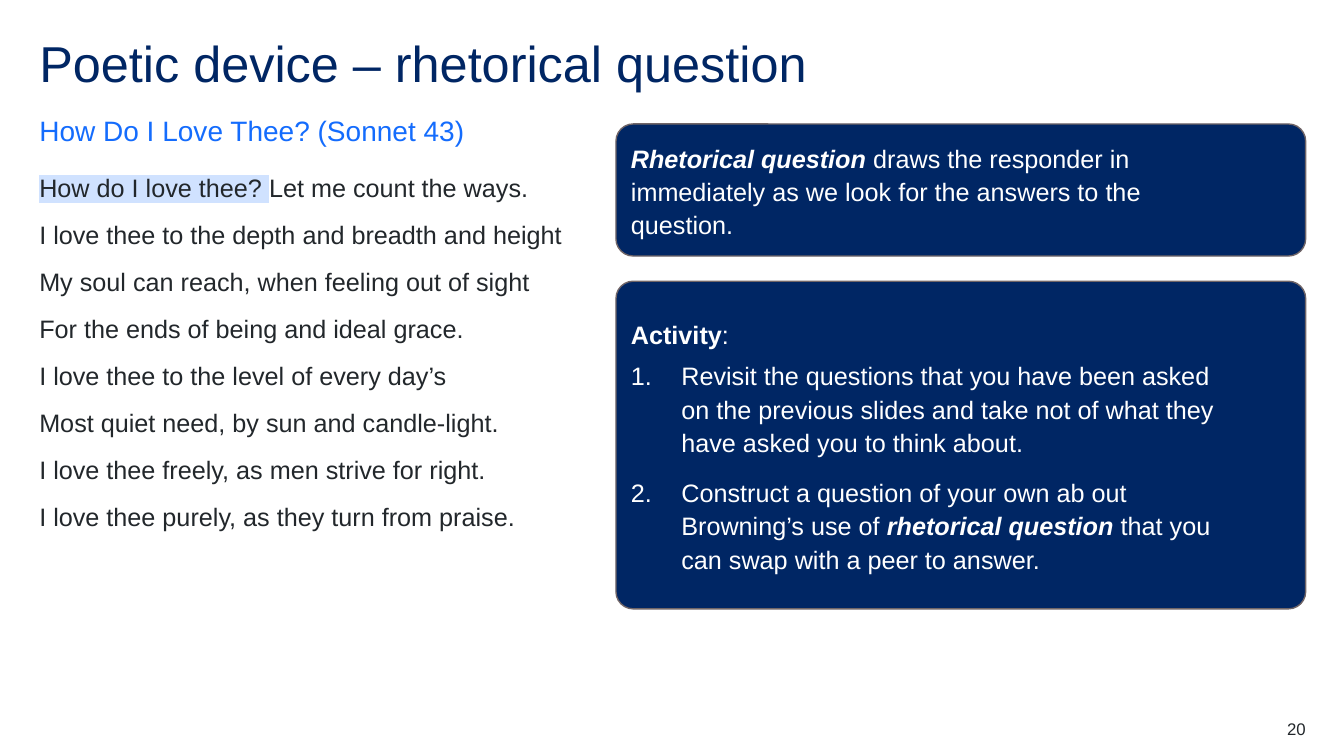
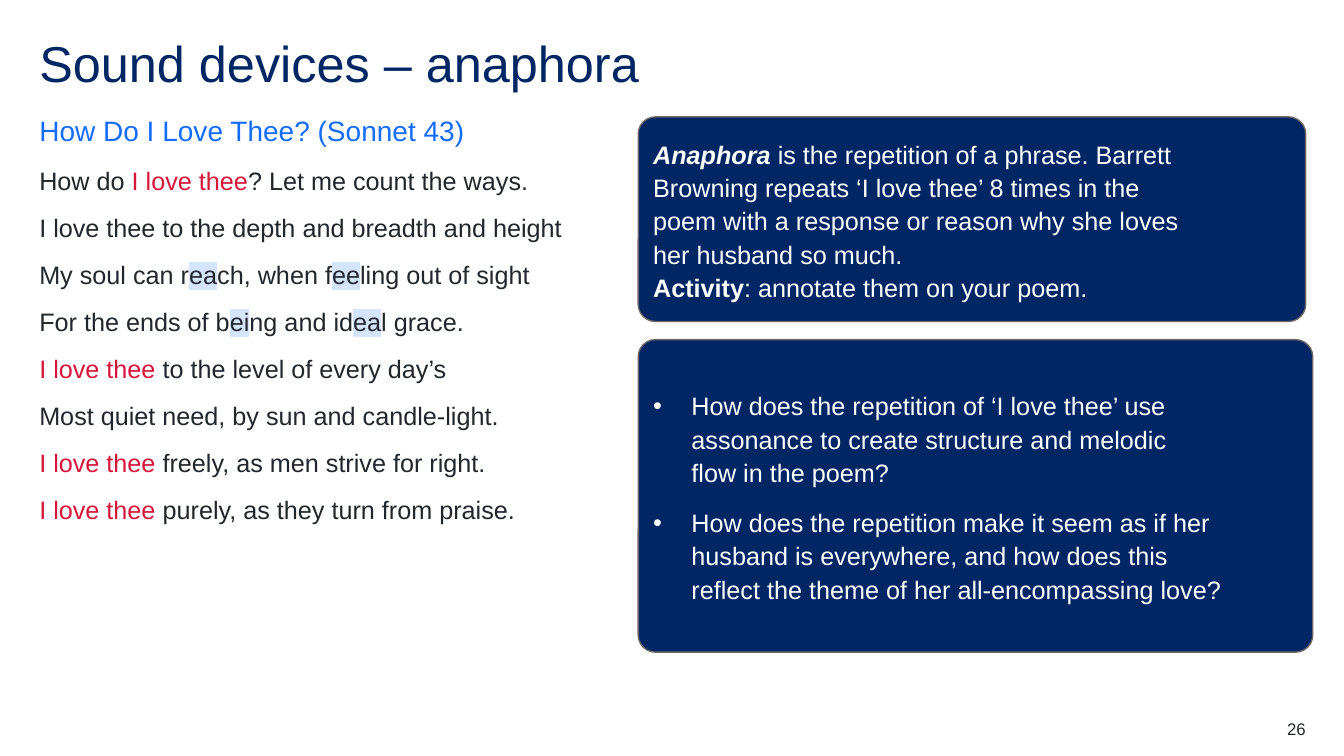
import pptx
import pptx.util
import pptx.dml.color
import pptx.enum.shapes
import pptx.enum.text
import pptx.oxml.ns
from lxml import etree

Inches, Pt = pptx.util.Inches, pptx.util.Pt
ANCHOR = pptx.enum.text.MSO_ANCHOR
ALIGN = pptx.enum.text.PP_ALIGN

COLORS = {
    "navy": "002664", "blue": "146CFD", "ink": "22272B", "red": "D7153A",
    "white": "FFFFFF", "border": "706567", "sky": "D0E2FF", "pale": "D6E5FF",
}
FONT = "Arial"
LEFT, CONTENT_W, RIGHT = 0.39, 12.56, 12.95
CORNER = 0.17

# Run styles: a paragraph is a string or a list of strings and (text, style) pairs.
STYLES = {
    "bold": {"bold": True},
    "term": {"bold": True, "italic": True},
    "phrase": {"color": "red"},
    "question": {"highlight": "sky"},
    "assonance": {"highlight": "pale"},
}
POEM = "How Do I Love Thee? (Sonnet 43)"
REFRAIN = ("I love thee", "phrase")
LINE_2 = "I love thee to the depth and breadth and height"
LINE_6 = "Most quiet need, by sun and candle-light."

SLIDES = [
    {
        "title": "Poetic device – rhetorical question",
        "number": "20",
        "poem_box": (LEFT, 1.71, 5.33, 5.27),
        "poem": [
            [("How do I love thee? ", "question"), "Let me count the ways."],
            LINE_2,
            "My soul can reach, when feeling out of sight",
            "For the ends of being and ideal grace.",
            "I love thee to the level of every day’s",
            LINE_6,
            "I love thee freely, as men strive for right.",
            "I love thee purely, as they turn from praise.",
        ],
        "cards": [
            {"box": (6.11, 1.23, 6.84, 1.31), "intro": [
                [("Rhetorical question ", "term"),
                 "draws the responder in immediately as we look for the answers to the question."],
            ]},
            {"box": (6.11, 2.79, 6.84, 3.25), "intro": [[("Activity", "bold"), ":"]],
             "bullet": "number", "indent": 0.5, "items": [
                "Revisit the questions that you have been asked on the previous slides "
                "and take not of what they have asked you to think about.",
                ["Construct a question of your own ab out Browning’s use of ",
                 ("rhetorical question ", "term"),
                 "that you can swap with a peer to answer."],
            ]},
        ],
    },
    {
        "title": "Sound devices – anaphora",
        "number": "26",
        "poem_box": (LEFT, 1.64, 5.4, 5.34),
        "poem": [
            ["How do ", REFRAIN, "? Let me count the ways."],
            LINE_2,
            ["My soul can r", ("ea", "assonance"), "ch, when f", ("ee", "assonance"),
             "ling out of sight"],
            ["For the ends of b", ("ei", "assonance"), "ng and id", ("ea", "assonance"),
             "l grace."],
            [REFRAIN, " to the level of every day’s"],
            LINE_6,
            [REFRAIN, " freely, as men strive for right."],
            [REFRAIN, " purely, as they turn from praise."],
        ],
        "cards": [
            {"box": (6.33, 1.16, 6.62, 2.03), "intro": [
                [("Anaphora", "term"),
                 " is the repetition of a phrase. Barrett Browning repeats ‘I love thee’ "
                 "8 times in the\npoem with a response or reason why she loves her husband so much."],
                [("Activity", "bold"), ": annotate them on your poem."],
            ]},
            {"box": (6.33, 3.37, 6.69, 3.1), "bullet": "dot", "indent": 0.38, "items": [
                "How does the repetition of ‘I love thee’ use assonance to create structure "
                "and melodic \nflow in the poem?",
                "How does the repetition make it seem as if her husband is everywhere, "
                "and how does this reflect the theme of her all-encompassing love?",
            ]},
        ],
    },
]


def rgb(name):
    return pptx.dml.color.RGBColor.from_string(COLORS[name])


def add_child(parent, tag, **attrs):
    return etree.SubElement(parent, pptx.oxml.ns.qn(tag), attrs)


def add_run(p, text, size, color, bold=False, italic=False, highlight=None):
    r = p.add_run()
    r.text = text
    font = r.font
    font.size, font.bold, font.italic = Pt(size), bold, italic
    font.color.rgb = rgb(color)
    if highlight:
        mark = add_child(r.font._element, "a:highlight")
        add_child(mark, "a:srgbClr", val=COLORS[highlight])
    font.name = FONT


def set_bullet(p, kind, indent):
    pPr = p._p.get_or_add_pPr()
    pPr.set("marL", str(Inches(indent)))
    pPr.set("indent", str(-Inches(indent)))
    add_child(pPr, "a:buFont", typeface=FONT)
    if kind == "number":
        add_child(pPr, "a:buAutoNum", type="arabicPeriod")
    else:
        add_child(pPr, "a:buChar", char="•")


def write(tf, paragraphs, size=18, color="ink", spacing=1.0, before=0, after=0,
          align=ALIGN.LEFT, bullet=None, indent=0):
    """Add formatted paragraphs to a text frame, after any it already holds."""
    for parts in paragraphs:
        first = tf.paragraphs[0]
        p = tf.add_paragraph() if first.runs else first
        p.alignment, p.line_spacing = align, spacing
        p.space_before, p.space_after = Pt(before), Pt(after)
        if bullet:
            set_bullet(p, bullet, indent)
        for part in [parts] if isinstance(parts, str) else parts:
            text, style = (part, None) if isinstance(part, str) else part
            look = {"size": size, "color": color, **STYLES.get(style, {})}
            for i, line in enumerate(text.split("\n")):
                if i:
                    p.add_line_break()
                add_run(p, line, **look)


def set_frame(tf, anchor, margins):
    tf.word_wrap = True
    tf.vertical_anchor = anchor
    tf.margin_left, tf.margin_top, tf.margin_right, tf.margin_bottom = map(Inches, margins)


def add_text(slide, box, paragraphs, anchor=ANCHOR.TOP, **look):
    tf = slide.shapes.add_textbox(*map(Inches, box)).text_frame
    set_frame(tf, anchor, (0, 0, 0, 0))
    write(tf, paragraphs, **look)


def add_card(slide, box, intro=(), items=(), bullet=None, indent=0):
    sp = slide.shapes.add_shape(
        pptx.enum.shapes.MSO_SHAPE.ROUNDED_RECTANGLE, *map(Inches, box))
    sp.adjustments[0] = CORNER / box[3]
    sp.shadow.inherit = False
    sp.fill.solid()
    sp.fill.fore_color.rgb = rgb("navy")
    sp.line.color.rgb = rgb("border")
    sp.line.width = Pt(1)
    tf = sp.text_frame
    set_frame(tf, ANCHOR.MIDDLE, (0.1, 0.05, 0.83, 0.05))
    write(tf, intro, color="white", spacing=1.1)
    write(tf, items, color="white", spacing=1.1, before=6, after=6,
          bullet=bullet, indent=indent)


def add_slide(prs, content):
    slide = prs.slides.add_slide(prs.slide_layouts[6])
    add_text(slide, (LEFT, 0.39, CONTENT_W, 0.6), [content["title"]],
             size=36, color="navy", spacing=0.9)
    add_text(slide, (LEFT, 1.07, CONTENT_W, 0.39), [POEM], anchor=ANCHOR.BOTTOM,
             size=20, color="blue", spacing=1.5, after=12)
    add_text(slide, content["poem_box"], content["poem"], after=12)
    for card in content["cards"]:
        add_card(slide, **card)
    add_text(slide, (RIGHT - 0.79, 7.13, 0.79, 0.2), [content["number"]],
             size=12, align=ALIGN.RIGHT)


def main():
    prs = pptx.Presentation()
    prs.slide_width, prs.slide_height = Inches(13.33), Inches(7.5)
    for content in SLIDES:
        add_slide(prs, content)
    prs.save("out.pptx")


if __name__ == "__main__":
    main()
